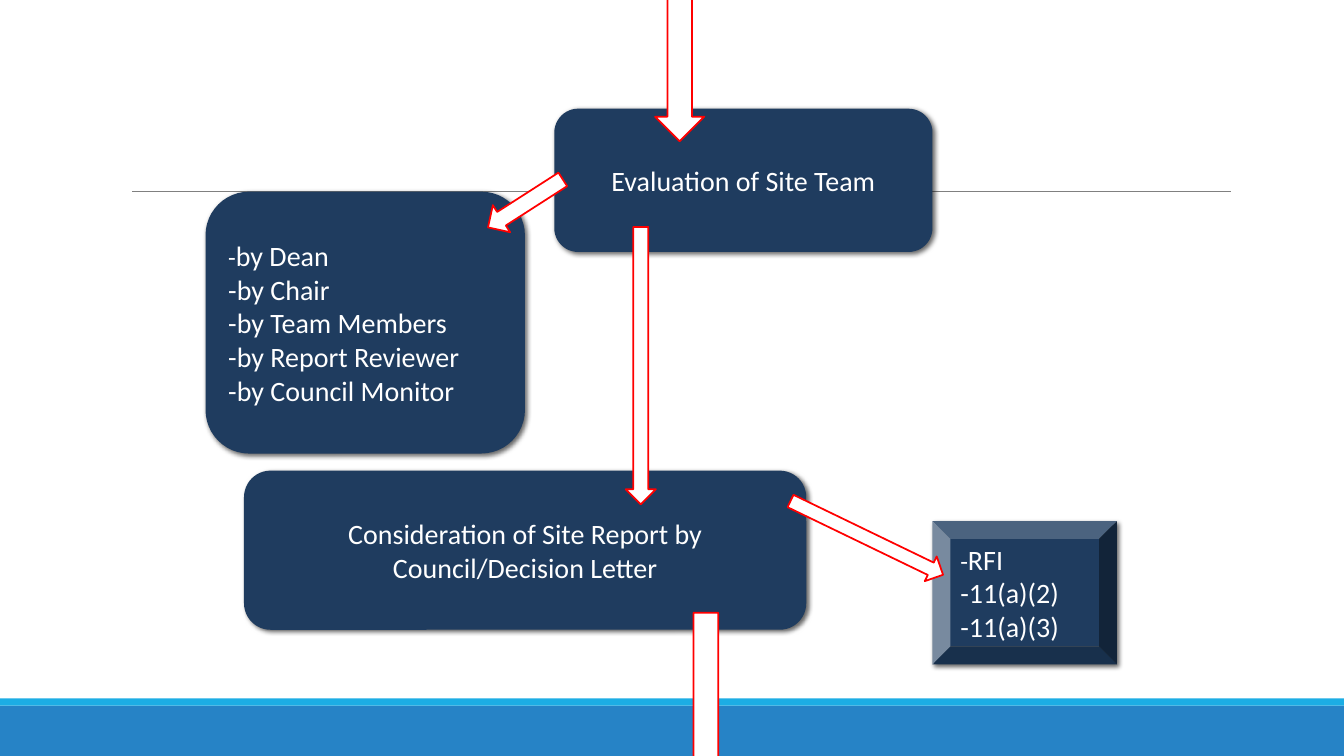
from lxml import etree
from pptx import Presentation
from pptx.dml.color import RGBColor
from pptx.enum.shapes import MSO_CONNECTOR, MSO_SHAPE
from pptx.enum.text import MSO_ANCHOR, PP_ALIGN
from pptx.oxml.ns import qn
from pptx.util import Cm, Pt

RECTANGLE = MSO_SHAPE.RECTANGLE
ROUNDED = MSO_SHAPE.ROUNDED_RECTANGLE
BEVEL = MSO_SHAPE.BEVEL
DOWN = MSO_SHAPE.DOWN_ARROW
RIGHT = MSO_SHAPE.RIGHT_ARROW
STRAIGHT = MSO_CONNECTOR.STRAIGHT
MIDDLE = MSO_ANCHOR.MIDDLE
LEFT, CENTER = PP_ALIGN.LEFT, PP_ALIGN.CENTER

COLORS = {
    "navy": "1F3C5F",
    "blue": "2683C6",
    "cyan": "1CADE4",
    "red": "FF0000",
    "gray": "808080",
    "white": "FFFFFF",
    "black": "000000",
}
WIDTH, HEIGHT = 33.87, 19.05


def color(name):
    return RGBColor.from_string(COLORS[name])


def add_run(paragraph, text, font="Calibri", size=20, fill="white"):
    run = paragraph.add_run()
    run.text = text
    run.font.name = font
    run.font.size = Pt(size)
    run.font.color.rgb = color(fill)


class FlowSlide:
    """Holds the current slide and draws its elements in one style."""

    def __init__(self, slide):
        self.slide = slide

    def shape(self, kind, box, fill, line=None):
        shape = self.slide.shapes.add_shape(kind, *map(Cm, box))
        shape.shadow.inherit = False
        shape.fill.solid()
        shape.fill.fore_color.rgb = color(fill)
        if line:
            shape.line.color.rgb = color(line)
            shape.line.width = Pt(1.25)
        else:
            shape.line.fill.background()
        return shape

    def arrow(self, kind, box, rotation=0):
        self.shape(kind, box, "white", "red").rotation = rotation

    def rule(self, left, right, top):
        line = self.slide.shapes.add_connector(
            STRAIGHT, Cm(left), Cm(top), Cm(right), Cm(top))
        line.line.color.rgb = color("gray")
        line.line.width = Pt(0.5)
        etree.SubElement(line._element.spPr, qn("a:effectLst"))

    def step(self, kind, box, lines, align=LEFT, dash_size=20):
        """Draw a shadowed box; dash_size applies to the first line's dash."""
        shape = self.shape(kind, box, "navy")
        self.cast_shadow(shape)
        frame = shape.text_frame
        frame.word_wrap = True
        frame.vertical_anchor = MIDDLE
        for index, text in enumerate(lines):
            paragraph = frame.add_paragraph() if index else frame.paragraphs[0]
            paragraph.alignment = align
            if index == 0 and text.startswith("-"):
                add_run(paragraph, "-", size=dash_size)
                text = text[1:]
            add_run(paragraph, text)

    def cast_shadow(self, shape):
        effects = shape._element.spPr.find(qn("a:effectLst"))
        shadow = etree.SubElement(
            effects, qn("a:outerShdw"), blurRad=str(Pt(3.5)), dist=str(Pt(2)),
            dir=str(45 * 60000), algn="ctr", rotWithShape="0")
        tint = etree.SubElement(shadow, qn("a:srgbClr"), val=COLORS["black"])
        etree.SubElement(tint, qn("a:alpha"), val="60000")


def main():
    presentation = Presentation()
    presentation.slide_width = Cm(WIDTH)
    presentation.slide_height = Cm(HEIGHT)
    blank_layout = presentation.slide_layouts[6]
    flow = FlowSlide(presentation.slides.add_slide(blank_layout))

    # Footer bands and horizontal rule
    flow.shape(RECTANGLE, (0, 17.78, WIDTH, 1.27), "blue")
    flow.shape(RECTANGLE, (0, 17.6, WIDTH, 0.18), "cyan")
    flow.rule(3.33, 31.01, 4.83)

    # Evaluation, with the arrow leading in
    flow.step(ROUNDED, (13.97, 2.74, 9.53, 3.61),
              ["Evaluation of Site Team"], CENTER)
    flow.arrow(DOWN, (16.51, -0.25, 1.24, 3.81))

    # Evaluators
    flow.step(ROUNDED, (5.18, 4.83, 8.05, 6.6),
              ["-by Dean", "-by Chair", "-by Team Members",
               "-by Report Reviewer", "-by Council Monitor"], dash_size=18)
    flow.arrow(RIGHT, (12.12, 4.72, 2.24, 0.81), 147.3)

    # Council decision
    flow.step(ROUNDED, (6.15, 11.86, 14.17, 4.01),
              ["Consideration of Site Report by Council/Decision Letter"],
              CENTER)
    flow.arrow(DOWN, (15.77, 5.72, 0.76, 6.99))

    # Outcomes, and the arrow leading to the next step
    flow.step(BEVEL, (23.5, 13.13, 4.65, 3.61),
              ["-RFI", "-11(a)(2)", "-11(a)(3)"], dash_size=18)
    flow.arrow(RIGHT, (19.71, 13.21, 4.27, 0.69), 25.8)
    flow.arrow(DOWN, (17.17, 15.44, 1.24, 4.65))

    presentation.save("out.pptx")


if __name__ == "__main__":
    main()
